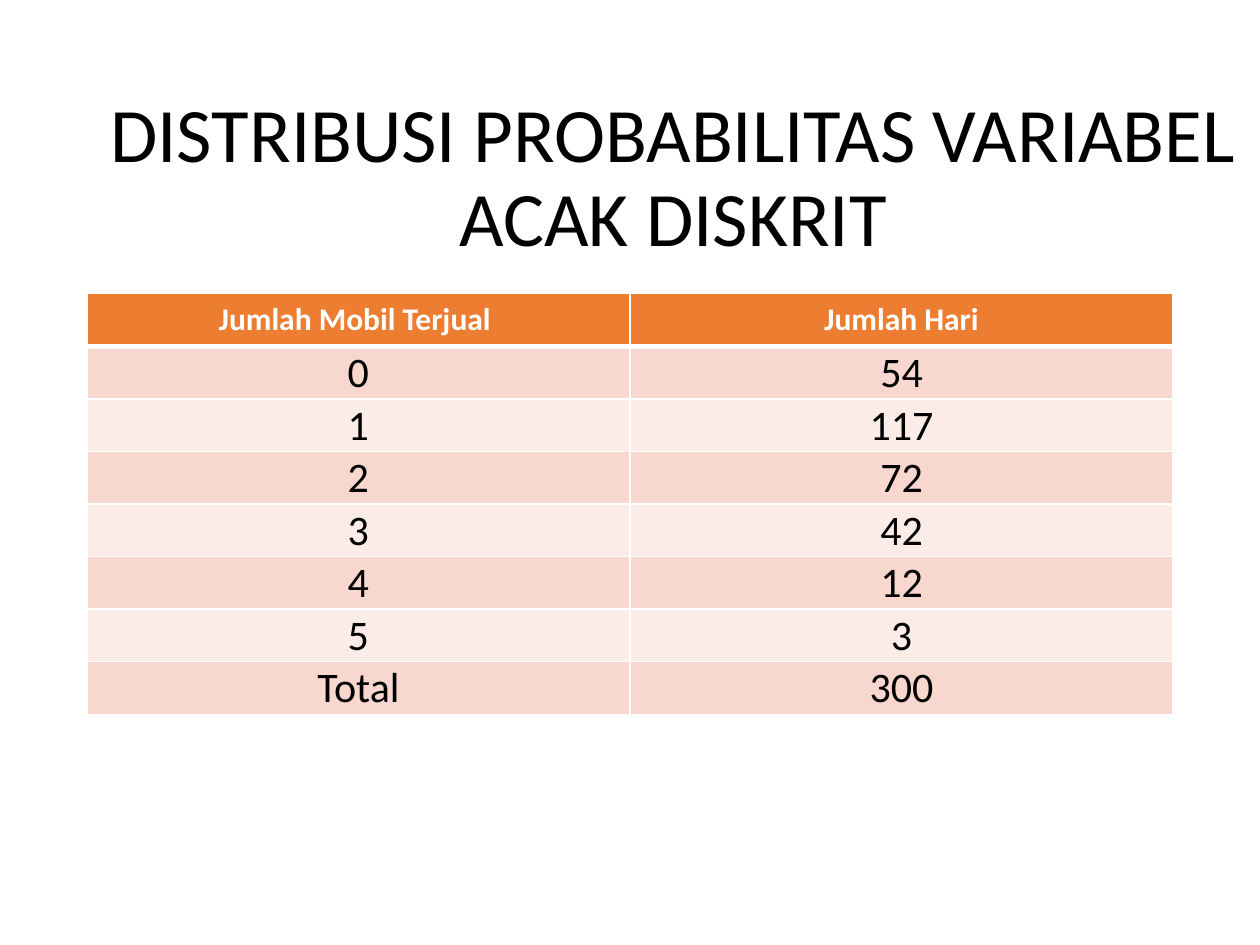
from dataclasses import dataclass

from lxml.etree import SubElement
from pptx import Presentation
from pptx.dml.color import RGBColor
from pptx.enum.text import MSO_ANCHOR, PP_ALIGN
from pptx.oxml.ns import qn
from pptx.util import Cm, Pt


@dataclass(frozen=True)
class Theme:
    font: str = "Calibri"
    black: str = "000000"
    white: str = "FFFFFF"
    header: str = "ED7D31"
    bands: tuple = ("F8D7CE", "FCECE8")
    title_size: int = 44
    header_size: int = 18
    body_size: int = 24


theme = Theme()


def style(p, size, color, bold=False):
    p.alignment = PP_ALIGN.CENTER
    p.font.name = theme.font
    p.font.size = Pt(size)
    p.font.bold = bold
    p.font.color.rgb = RGBColor.from_string(color)


def add_border(cell, side, width):
    ln = SubElement(cell._tc.get_or_add_tcPr(), qn(f"a:ln{side}"), w=str(Pt(width)))
    fill = SubElement(ln, qn("a:solidFill"))
    SubElement(fill, qn("a:srgbClr"), val=theme.white)


prs = Presentation()
prs.slide_width, prs.slide_height = Cm(25.4), Cm(19.05)
s = prs.slides.add_slide(prs.slide_layouts[6])

title = s.shapes.add_textbox(Cm(1.75), Cm(1.78), Cm(23.65), Cm(3.68))
tf = title.text_frame
tf.word_wrap = True
tf.vertical_anchor = MSO_ANCHOR.MIDDLE
p = tf.paragraphs[0]
p.text = "DISTRIBUSI PROBABILITAS VARIABEL ACAK DISKRIT"
p.line_spacing = 0.9
style(p, theme.title_size, theme.black)

sales = [
    ("Jumlah Mobil Terjual ", "Jumlah Hari"),
    ("0", "54"),
    ("1", "117"),
    ("2", "72"),
    ("3", "42"),
    ("4", "12"),
    ("5", "3"),
    ("Total", "300"),
]
row_height, col_width = Cm(1.06 - 0.02), Cm(10.95)
row_height = Cm(1.06)
table = s.shapes.add_table(
    len(sales), 2, Cm(1.75), Cm(5.92), col_width * 2, row_height * len(sales)
).table

for i, values in enumerate(sales):
    table.rows[i].height = row_height
    for j, value in enumerate(values):
        table.columns[j].width = col_width
        cell = table.cell(i, j)
        cell.text = value
        p = cell.text_frame.paragraphs[0]
        if i == 0:
            color = theme.header
            cell.vertical_anchor = MSO_ANCHOR.MIDDLE
            style(p, theme.header_size, theme.white, bold=True)
        else:
            color = theme.bands[(i - 1) % 2]
            cell.vertical_anchor = MSO_ANCHOR.BOTTOM
            cell.margin_left = cell.margin_right = cell.margin_top = Cm(0.02)
            cell.margin_bottom = 0
            style(p, theme.body_size, theme.black)
        for side in "LRTB":
            under_header = (i, side) in ((0, "B"), (1, "T"))
            add_border(cell, side, 3 if under_header else 1)
        cell.fill.solid()
        cell.fill.fore_color.rgb = RGBColor.from_string(color)

prs.save("out.pptx")
